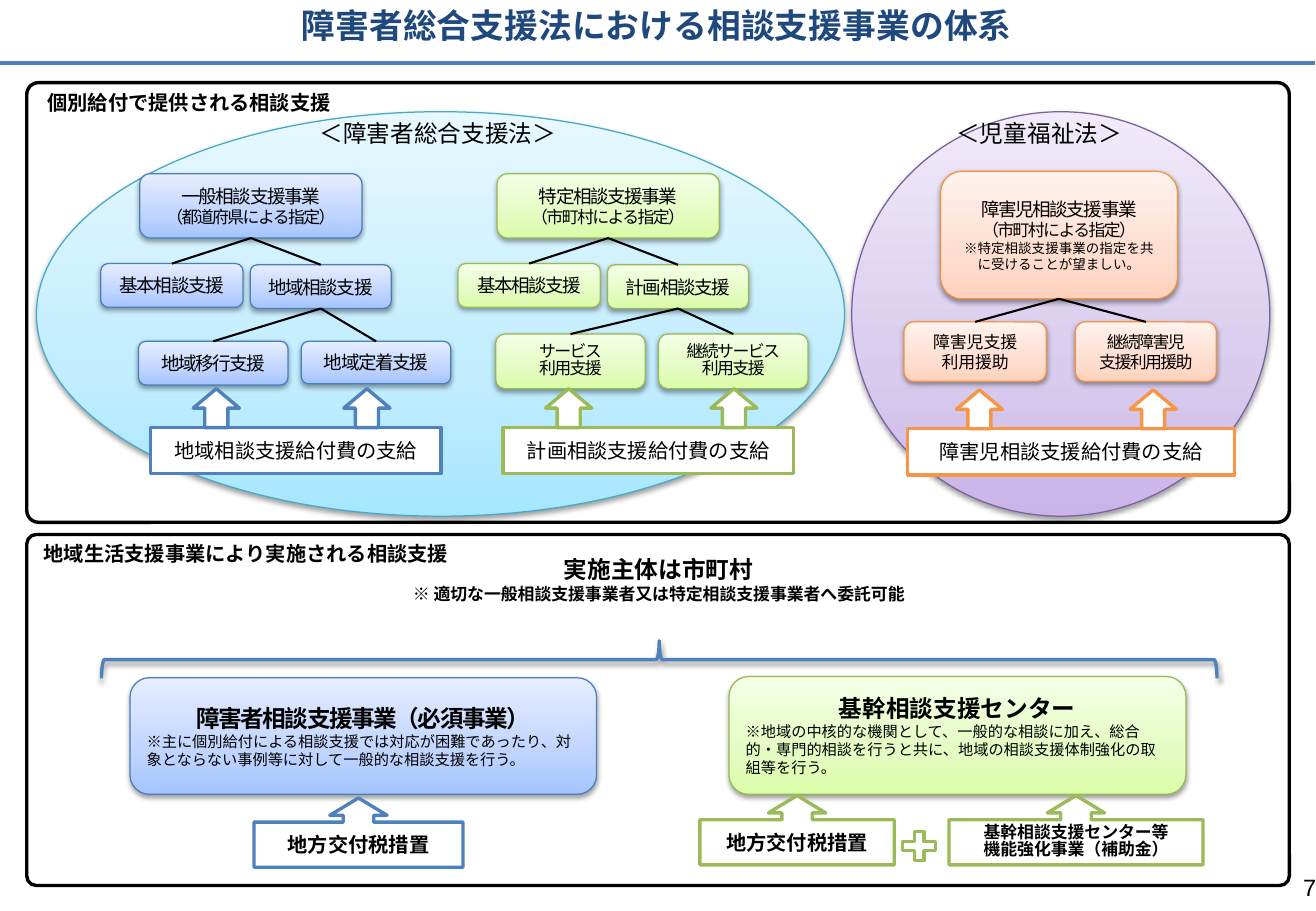
from copy import deepcopy
from lxml.etree import SubElement
from pptx import Presentation
from pptx.dml.color import RGBColor
from pptx.enum.shapes import MSO_CONNECTOR, MSO_SHAPE as SH
from pptx.enum.text import MSO_ANCHOR, PP_ALIGN as AL
from pptx.oxml.ns import qn
from pptx.util import Pt

PX = 9144
W, H = 1083, 750
GOTHIC, ARIAL = "Noto Sans CJK JP", "Arial"

rgb = RGBColor.from_string
BLACK, WHITE, NAVY = rgb("000000"), rgb("FFFFFF"), rgb("1F497D")
BLUE, GREEN, ORANGE = rgb("4F81BD"), rgb("9BBB59"), rgb("F79646")
RULE = rgb("4B7EBC")
THEMES = {
    "blue": (RULE, [rgb("A4C4FF"), rgb("BFD4FF"), rgb("E6EEFF")]),
    "green": (rgb("98B955"), [rgb("DAFDA7"), rgb("E4FCC2"), rgb("F5FFE7")]),
    "orange": (rgb("F69240"), [rgb("FFD2BD"), rgb("FFDED0"), rgb("FFF2ED")]),
    "purple": (rgb("7D60A0"), [rgb("C9B5E8"), rgb("D8CBEE"), rgb("F0EAF9")]),
    "aqua": (rgb("46AAC5"), [rgb("A7E6FF"), rgb("C1EDFF"), rgb("E7F8FF")]),
}


def style(size, name=GOTHIC, bold=False, color=BLACK, spc=0, align=AL.CENTER, **para):
    return {"font": {"size": Pt(size), "name": name, "bold": bold},
            "color": color, "spc": spc, "para": {"alignment": align, **para}}


TIGHT = -90
NODE, SUB = style(11, spc=TIGHT), style(10, spc=TIGHT)
LEAF = style(10, spc=TIGHT, line_spacing=Pt(10))
LOOSE, TINY = style(10), style(8)
NOTE = style(9, align=AL.LEFT)
LAW, PAY, FUND = style(14), style(12), style(12, bold=True)
FUND_SMALL = style(10, bold=True, line_spacing=Pt(10))
HEAD = style(12, bold=True, align=AL.JUSTIFY)
BIG, BIG_TIGHT = style(14, bold=True), style(14, bold=True, spc=TIGHT)

PANELS = [(22, 68, 1039, 362), (22, 440, 1039, 289)]
ELLIPSES = [("purple", (701, 92, 344, 333)), ("aqua", (30, 92, 665, 333))]

TREES = [
    ("blue", [
        ((115, 143, 183, 53), None, [("一般相談支援事業", NODE), ("（都道府県による指定）", SUB)]),
        ((83, 217, 117, 36), 0, [("基本相談支援", NODE)]),
        ((206, 218, 116, 36), 0, [("地域相談支援", NODE)]),
        ((114, 281, 123, 36), 2, [("地域移行支援", NODE)]),
        ((248, 281, 123, 35), 2, [("地域定着支援", NODE)]),
    ]),
    ("green", [
        ((409, 143, 183, 53), None, [("特定相談支援事業", NODE), ("（市町村による指定）", SUB)]),
        ((377, 217, 117, 36), 0, [("基本相談支援", NODE)]),
        ((500, 218, 116, 36), 0, [("計画相談支援", NODE)]),
        ((408, 275, 123, 45), 2, [("サービス", LEAF), ("利用支援", LEAF)]),
        ((542, 275, 123, 45), 2, [("継続サービス", LEAF), ("利用支援", LEAF)]),
    ]),
    ("orange", [
        ((774, 141, 195, 105), None, [
            ("障害児相談支援事業", NODE), ("（市町村による指定）", SUB),
            ("※特定相談支援事業の指定を共に受けることが望ましい。", TINY)]),
        ((744, 265, 117, 49), 0, [("障害児支援", LOOSE), ("利用援助", LOOSE)]),
        ((885, 265, 116, 49), 0, [("継続障害児", SUB), ("支援利用援助", SUB)]),
    ]),
    ("blue", [((107, 558, 384, 96), None, [
        ("障害者相談支援事業（必須事業）", BIG_TIGHT),
        ("※主に個別給付による相談支援では対応が困難であったり、対象とならない事例等に対して一般的な相談支援を行う。", NOTE)])]),
    ("green", [((600, 557, 376, 97), None, [
        ("基幹相談支援センター", BIG),
        ("※地域の中核的な機関として、一般的な相談に加え、総合的・専門的相談を行うと共に、地域の相談支援体制強化の取組等を行う。", NOTE)])]),
]

ARROW_W, ARROW_H, PAY_H = 38, 32, 38
PAYMENTS = [
    (BLUE, 124, 352, 239, "地域相談支援給付費の支給", (159, 283)),
    (GREEN, 414, 352, 239, "計画相談支援給付費の支給", (449, 585)),
    (ORANGE, 747, 353, 269, "障害児相談支援給付費の支給", (787, 930)),
]
FUNDS = [
    (BLUE, (209, 657, 172, 57), [("地方交付税措置", FUND)]),
    (GREEN, (576, 655, 160, 57), [("地方交付税措置", FUND)]),
    (GREEN, (781, 655, 209, 57), [("基幹相談支援センター等", FUND_SMALL), ("機能強化事業（補助金）", FUND_SMALL)]),
]
PLUS, BRACE = (738, 680, 37, 33), (527, 84, 31, 918)

TEXTS = [
    ((30, 69, 358, 28), (9, 5), [("個別給付で提供される相談支援", HEAD)]),
    ((27, 441, 409, 42), (9, 5), [("地域生活支援事業により実施される相談支援", HEAD)]),
    ((237, 98, 247, 31), (0, 0), [("＜障害者総合支援法＞", LAW)]),
    ((787, 98, 172, 31), (0, 0), [("＜児童福祉法＞", style(14, align=AL.LEFT))]),
    ((218, 457, 648, 47), (0, 0), [
        ("実施主体は市町村", style(14, ARIAL, True)),
        ("※ 適切な一般相談支援事業者又は特定相談支援事業者へ委託可能", style(10, ARIAL, True))]),
    ((20, 4, 1041, 41), (0, 0), [("障害者総合支援法における相談支援事業の体系", style(20, ARIAL, True, NAVY))]),
    ((840, 714, 253, 52), (10, 5), [("7", style(14, ARIAL, align=AL.RIGHT))]),
]

prs = Presentation()
prs.slide_width, prs.slide_height = W * PX, H * PX
shapes = prs.slides.add_slide(prs.slide_layouts[6]).shapes


def emu(box):
    return [v * PX for v in box]


def write(sp, paras, inset=(0, 0), anchor=MSO_ANCHOR.MIDDLE):
    tf = sp.text_frame
    h, v = emu(inset)
    for k, val in {"word_wrap": True, "vertical_anchor": anchor, "margin_left": h,
                   "margin_right": h, "margin_top": v, "margin_bottom": v}.items():
        setattr(tf, k, val)
    for i, (text, fmt) in enumerate(paras):
        p = tf.add_paragraph() if i else tf.paragraphs[0]
        for k, val in fmt["para"].items():
            setattr(p, k, val)
        r = p.add_run()
        r.text = text
        for k, val in fmt["font"].items():
            setattr(r.font, k, val)
        r.font.color.rgb = fmt["color"]
        rpr = r.font._element
        rpr.set("spc", str(fmt["spc"]))
        SubElement(rpr, qn("a:ea"), typeface=GOTHIC)


def draw(kind, box, line, width=2, fill=WHITE, adj=()):
    sp = shapes.add_shape(kind, *emu(box))
    sp.shadow.inherit = False
    if fill is None:
        sp.fill.background()
    else:
        sp.fill.solid()
        sp.fill.fore_color.rgb = fill
    sp.line.color.rgb, sp.line.width = line, Pt(width)
    for i, val in enumerate(adj):
        sp.adjustments[i] = val
    return sp


def cast_shadow(sp):
    effects = sp._element.spPr.find(qn("a:effectLst"))
    shadow = SubElement(effects, qn("a:outerShdw"), blurRad="40000", dist="20000",
                        dir="5400000", rotWithShape="0")
    SubElement(SubElement(shadow, qn("a:srgbClr"), val="000000"), qn("a:alpha"), val="38000")


def glossy(kind, box, theme):
    line, colors = THEMES[theme]
    sp = draw(kind, box, line, 0.75)
    sp.fill.gradient()
    sp.fill.gradient_angle = 90
    stops = sp._element.spPr.find(".//" + qn("a:gsLst"))
    stops.insert(1, deepcopy(stops[0]))
    for stop, pos, color in zip(sp.fill.gradient_stops, (0, 0.35, 1), colors):
        stop.position, stop.color.rgb = pos, color
    cast_shadow(sp)
    return sp


def connect(color, width, ends=(0, 0, 0, 0)):
    cn = shapes.add_connector(MSO_CONNECTOR.STRAIGHT, *emu(ends))
    cn.line.color.rgb, cn.line.width = color, Pt(width)
    SubElement(cn._element.spPr, qn("a:effectLst"))
    return cn


for box in PANELS:
    sp = draw(SH.ROUNDED_RECTANGLE, box, BLACK, adj=(0.027,))
    SubElement(sp._element.spPr.find(".//" + qn("a:srgbClr")), qn("a:alpha"), val="98000")

for theme, box in ELLIPSES:
    glossy(SH.OVAL, box, theme)

for theme, nodes in TREES:
    drawn = []
    for box, parent, paras in nodes:
        sp = glossy(SH.ROUNDED_RECTANGLE, box, theme)
        write(sp, paras, (9, 5))
        drawn.append(sp)
        if parent is not None:
            cn = connect(BLACK, 1.25)
            cn.begin_connect(drawn[parent], 2)
            cn.end_connect(sp, 0)

brace = draw(SH.LEFT_BRACE, BRACE, BLUE, fill=None)
brace.rotation = 90
cast_shadow(brace)

for color, box, paras in FUNDS:
    write(draw(SH.UP_ARROW_CALLOUT, box, color, adj=(0.44, 0.413, 0.25, 0.65)), paras)
draw(SH.MATH_PLUS, PLUS, GREEN)

for color, x, y, w, text, arrows in PAYMENTS:
    write(draw(SH.RECTANGLE, (x, y, w, PAY_H), color), [(text, PAY)])
    for ax in arrows:
        draw(SH.UP_ARROW, (ax, y - ARROW_H, ARROW_W, ARROW_H), color)

for box, inset, paras in TEXTS:
    write(shapes.add_textbox(*emu(box)), paras, inset, MSO_ANCHOR.TOP)
connect(RULE, 2.25, (-2, 52, 1082, 52))

prs.save("out.pptx")
